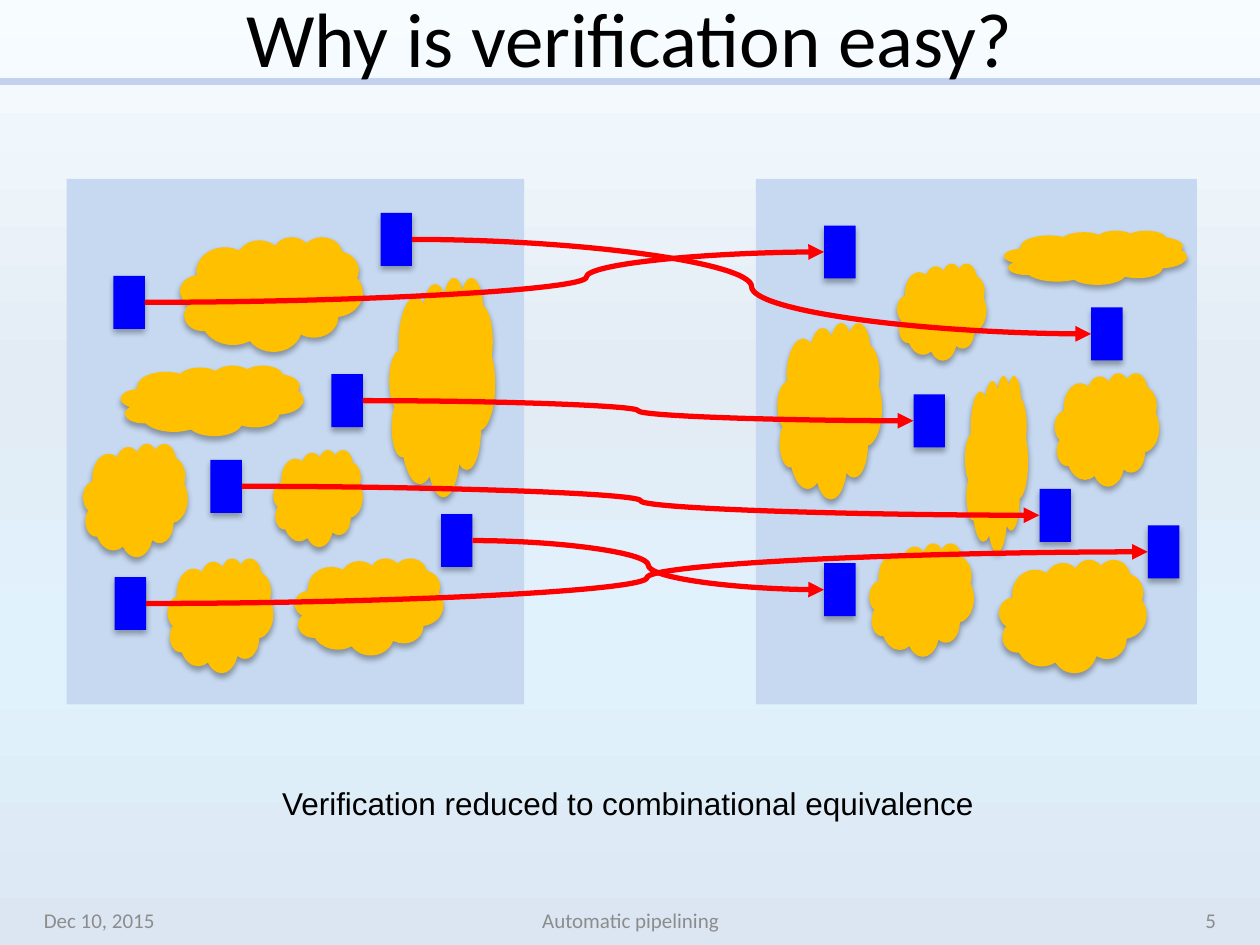
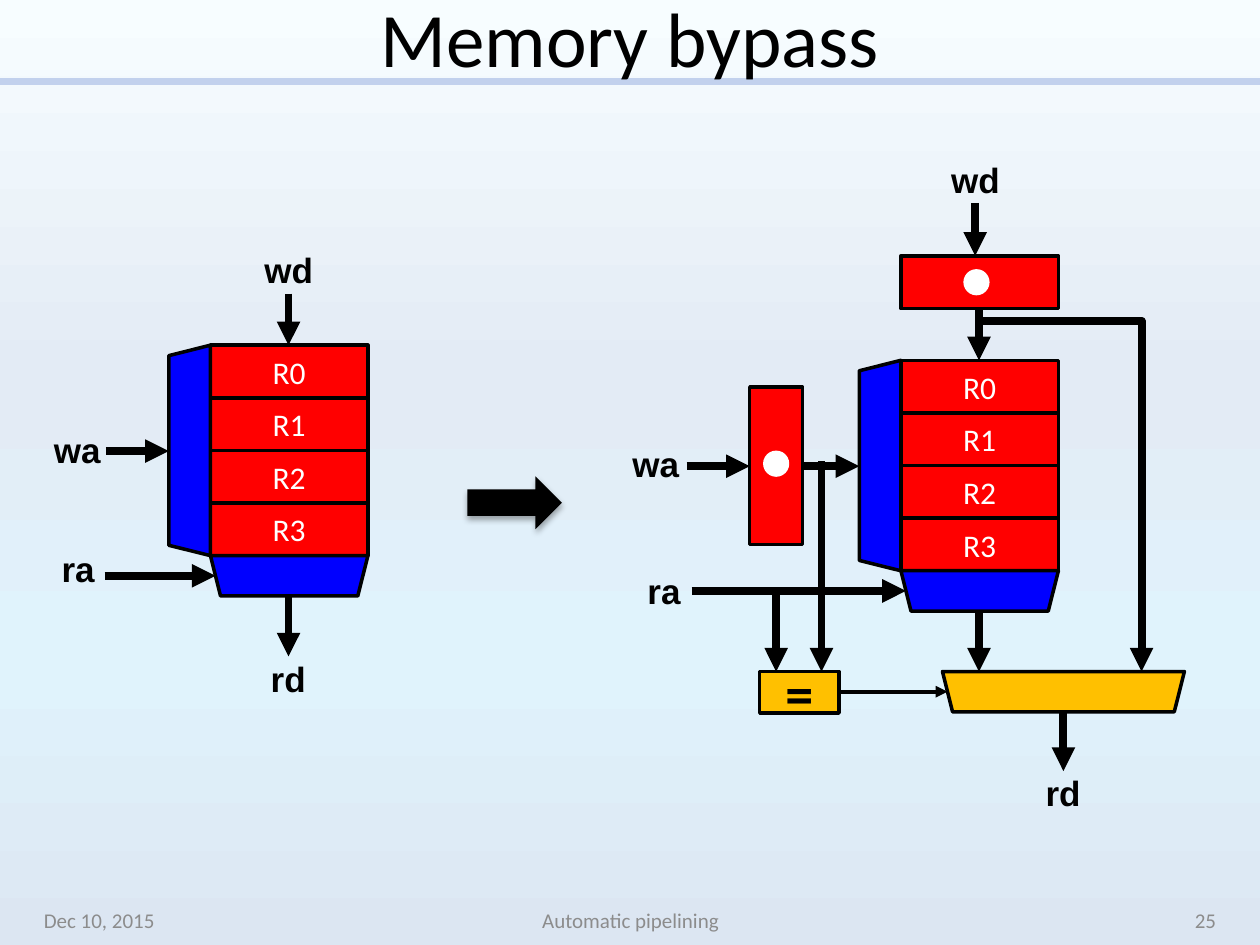
from lxml import etree
from pptx import Presentation
from pptx.dml.color import RGBColor
from pptx.enum.shapes import MSO_CONNECTOR as Con, MSO_SHAPE as Geo
from pptx.enum.text import MSO_ANCHOR as Anchor, MSO_AUTO_SIZE as Fit, PP_ALIGN as Align
from pptx.oxml.ns import qn
from pptx.util import Pt

SCALE = 9144  # EMU per px, 100 px to the inch
HEX = {
    "black": "000000", "white": "FFFFFF", "gray": "8C8C8C", "band": "C2D1ED",
    "panel": "C6D9F1", "blue": "0000FF", "red": "FF0000", "gold": "FFC000",
}
SKY = [(0, "F7FDFF"), (40, "E3EBF5"), (70, "E0F3FC"), (100, "DCE6F2")]
LEFT, RIGHT = 1, 3  # connection sites of a rectangle


def px(*nums):
    return [round(n * SCALE) for n in nums]


def rgb(name):
    return RGBColor.from_string(HEX[name])


def sub(node, tag, **attrs):
    return etree.SubElement(node, qn(tag), attrs)


def write(par, text, size, color, font="Calibri", bold=False, align=None):
    par.alignment = align
    run = par.add_run()
    run.text = text
    run.font.name, run.font.size, run.font.bold = font, Pt(size), bold
    run.font.color.rgb = rgb(color)


def shape(sl, geo, box, fill, line=False, glow=False, turn=0, flip=False):
    """Add a filled preset shape; glow gives it a soft drop shadow."""
    shp = sl.shapes.add_shape(geo, *px(*box))
    shp.shadow.inherit = False
    shp.fill.solid()
    shp.fill.fore_color.rgb = rgb(fill)
    if line:
        shp.line.color.rgb = rgb("black" if line is True else line)
        shp.line.width = Pt(2)
    else:
        shp.line.fill.background()
    shp.rotation = turn
    props = shp.element.spPr
    if flip:
        props.find(qn("a:xfrm")).set("flipV", "1")
    if glow:
        cast = sub(props.find(qn("a:effectLst")), "a:outerShdw", blurRad="44450",
                   dist="27940", dir="5400000", rotWithShape="0")
        tint = sub(cast, "a:srgbClr", val=HEX["black"])
        sub(tint, "a:alpha", val="32000")
    return shp


def wire(sl, ends, color="black", width=4.5, kind=Con.STRAIGHT, head=True, bend=None):
    """Add a connector from x1, y1 to x2, y2; bend moves its middle leg."""
    con = sl.shapes.add_connector(kind, *px(*ends))
    con.line.color.rgb = rgb(color)
    con.line.width = Pt(width)
    props = con.element.spPr
    if head:
        sub(props.find(qn("a:ln")), "a:tailEnd", type="triangle")
    sub(props, "a:effectLst")
    if bend is not None:
        geom = props.find(qn("a:prstGeom"))
        rules = geom.find(qn("a:avLst"))
        if rules is None:
            rules = sub(geom, "a:avLst")
        sub(rules, "a:gd", name="adj1", fmla=f"val {round(bend * 100000)}")
    return con


def label(sl, box, text, size=20, bold=True):
    tf = sl.shapes.add_textbox(*px(*box)).text_frame
    tf.word_wrap = False
    tf.auto_size = Fit.SHAPE_TO_FIT_TEXT
    write(tf.paragraphs[0], text, size, "black", "Arial", bold)


def paint(master):
    """Give the master its four-stop sky."""
    fill = master.background.fill
    fill.gradient()
    fill.gradient_angle = 270
    stops = next(master.element.iter(qn("a:gsLst")))
    for old in list(stops):
        stops.remove(old)
    for pos, tone in SKY:
        sub(sub(stops, "a:gs", pos=str(pos * 1000)), "a:srgbClr", val=tone)


def frame(prs, title, num):
    """Add a slide with its title and footer."""
    sl = prs.slides.add_slide(prs.slide_layouts[5])
    head = sl.shapes.title
    head.left, head.top, head.width, head.height = px(50, -8, 900, 75)
    head.text_frame.vertical_anchor = Anchor.MIDDLE
    write(head.text_frame.paragraphs[0], title, 44, "black", align=Align.CENTER)
    for x, wide, text, align in (
        (25, 233, "Dec 10, 2015", Align.LEFT),
        (342, 317, "Automatic pipelining", Align.CENTER),
        (742, 233, str(num), Align.RIGHT),
    ):
        tf = sl.shapes.add_textbox(*px(x, 710, wide, 40)).text_frame
        tf.word_wrap = True
        tf.vertical_anchor = Anchor.MIDDLE
        write(tf.paragraphs[0], text, 12, "gray", align=align)
    return sl


def panel(sl, box, latches, clouds):
    """Draw one circuit and return its latches."""
    x, y = box[:2]
    shape(sl, Geo.RECTANGLE, box, "panel")
    regs = [shape(sl, Geo.RECTANGLE, (x + dx, y + dy, 25, 42), "blue", glow=True)
            for dx, dy in latches]
    for dx, dy, w, h in clouds:
        shape(sl, Geo.CLOUD, (x + dx, y + dy, w, h), "gold", glow=True)
    return regs


def verify(prs):
    sl = frame(prs, "Why is verification easy?", 5)
    after = panel(
        sl, (600, 142, 350, 417),
        [(54, 37), (125, 171), (266, 102), (225, 246), (54, 305), (311, 275)],
        [(112, 67, 71, 77), (166, 156, 50, 140), (17, 114, 83, 140), (237, 154, 83, 90),
         (90, 289, 83, 90), (193, 302, 117, 90), (197, 41, 145, 43)])
    before = panel(
        sl, (53, 142, 363, 417),
        [(37, 77), (210, 155), (249, 27), (114, 223), (297, 266), (38, 316)],
        [(164, 215, 71, 77), (43, 148, 145, 56), (13, 210, 83, 90), (90, 46, 145, 91),
         (80, 301, 84, 91), (256, 78, 84, 174), (181, 301, 118, 77)])
    bends = [0.65] + [0.5] * 5
    for src, dst, bend in zip(before, after, bends):
        con = wire(sl, (0, 0, 0, 0), "red", 3, Con.CURVE, bend=bend)
        con.begin_connect(src, RIGHT)
        con.end_connect(dst, LEFT)
    label(sl, (214, 617, 574, 40), "Verification reduced to combinational equivalence", 18, False)


def memory(sl, x, y, lead):
    """Draw a register file at x, y; its read address wire is lead long."""
    for i in range(4):
        row = shape(sl, Geo.RECTANGLE, (x, y + i * 167 / 4, 125, 167 / 4), "red", True)
        write(row.text_frame.paragraphs[0], f"R{i}", 18, "white", align=Align.CENTER)
    shape(sl, Geo.TRAPEZOID, (x, y + 167, 125, 32), "blue", True, flip=True)
    shape(sl, Geo.TRAPEZOID, (x - 100, y + 67, 167, 33), "blue", True, turn=270)
    wire(sl, (x - 83, y + 84, x - 33, y + 84))
    wire(sl, (x + 4 - lead, y + 183, x + 4, y + 183))
    wire(sl, (x + 62, y + 199, x + 62, y + 247))
    wire(sl, (x + 62, y - 41, x + 62, y))


def plain(sl, x, y):
    memory(sl, x, y, 88)
    label(sl, (x - 134, y + 61, 58, 44), "wa")
    label(sl, (x - 128, y + 156, 47, 44), "ra")
    label(sl, (x + 33, y - 82, 59, 44), "wd")
    label(sl, (x + 38, y + 243, 48, 44), "rd")


def stage(sl, box, dot):
    """Draw a pipeline register holding a token."""
    shape(sl, Geo.RECTANGLE, box, "red", True)
    shape(sl, Geo.OVAL, (*dot, 18, 18), "white", "white")


def bypass(sl, x, y):
    memory(sl, x, y, 170)
    stage(sl, (x, y - 83, 125, 42), (x + 51, y - 71))
    stage(sl, (x - 120, y + 21, 42, 125), (x - 108, y + 73))
    for ends in (
        (59, -125, 59, -83), (-170, 84, -120, 84), (-63, 80, -63, 247),
        (-99, 182, -99, 247), (129, 279, 129, 326),
    ):
        wire(sl, [a + b for a, b in zip(ends, (x, y, x, y))])
    same = shape(sl, Geo.RECTANGLE, (x - 112, y + 247, 63, 33), "gold", True)
    write(same.text_frame.paragraphs[0], "=", 32, "black", bold=True, align=Align.CENTER)
    shape(sl, Geo.TRAPEZOID, (x + 33, y + 247, 192, 32), "gold", True, flip=True)
    wire(sl, (x - 49, y + 263, x + 37, y + 263), width=2.25)
    # a quarter turn lets the elbow leave upwards and arrive from above
    loop = wire(sl, (x + 263, y + 46, x - 10, y + 175), kind=Con.ELBOW, bend=-0.02)
    loop.element.spPr.find(qn("a:xfrm")).set("rot", "16200000")
    label(sl, (x + 30, y - 165, 59, 44), "wd")
    label(sl, (x - 223, y + 60, 58, 44), "wa")
    label(sl, (x - 211, y + 161, 47, 44), "ra")
    label(sl, (x + 105, y + 321, 48, 44), "rd")


def forward(prs):
    sl = frame(prs, "Memory bypass", 25)
    plain(sl, 167, 274)
    bypass(sl, 715, 286)
    shape(sl, Geo.RIGHT_ARROW, (371, 378, 75, 42), "black", glow=True)
    return sl


def main():
    prs = Presentation()
    prs.slide_width, prs.slide_height = px(1000, 750)
    paint(prs.slide_master)
    verify(prs)
    last = forward(prs)
    band = wire(last, (0, 65, 1000, 65), "band", 4, head=False)
    prs.slide_master.shapes.element.append(band.element)  # shared by every slide
    prs.save("out.pptx")


if __name__ == "__main__":
    main()
